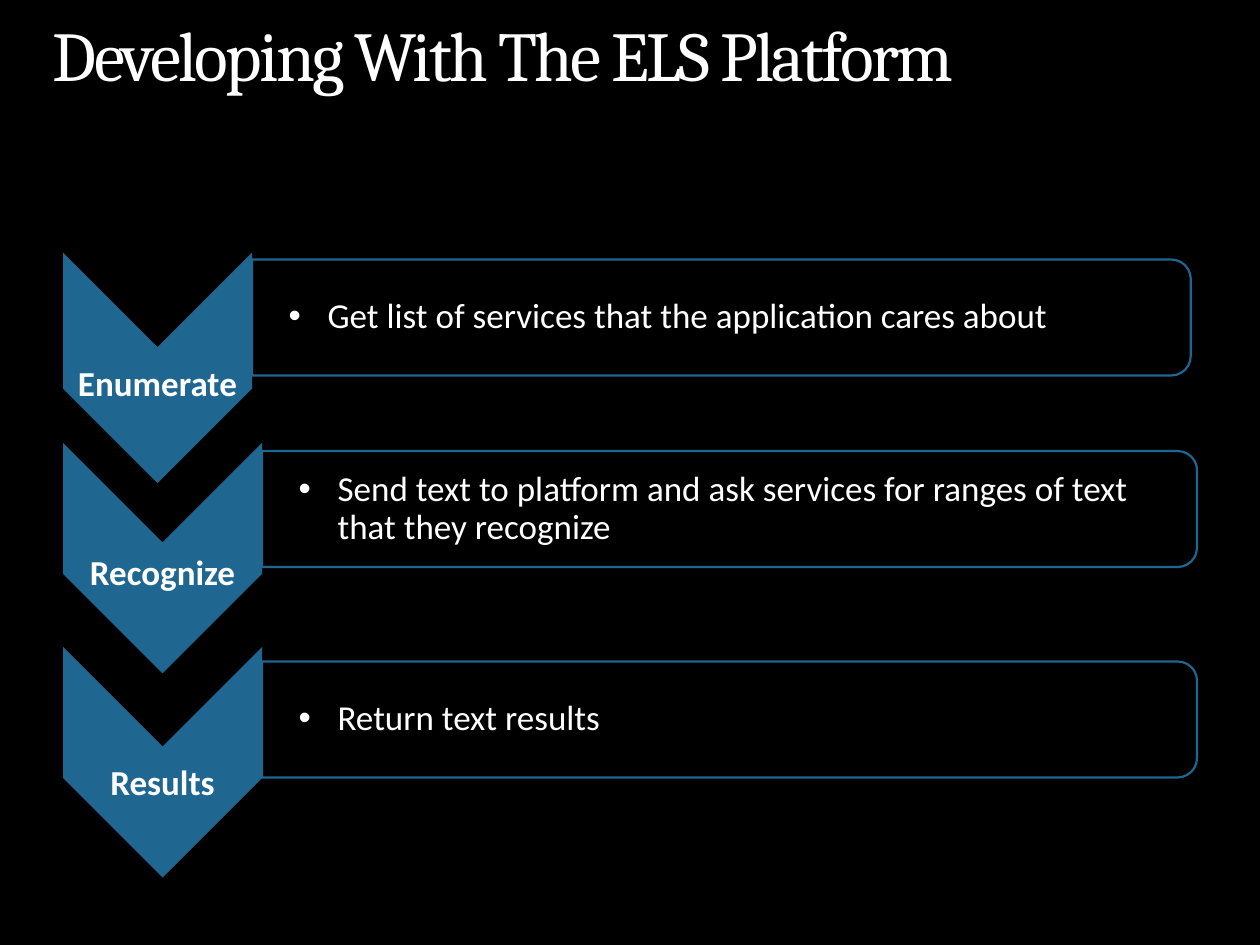
"""Build the slide on the three steps of developing with the ELS platform."""
from dataclasses import dataclass

from lxml.etree import SubElement
from pptx import Presentation
from pptx.dml.color import RGBColor
from pptx.enum.shapes import MSO_SHAPE as SHAPE
from pptx.enum.text import MSO_ANCHOR as ANCHOR, MSO_AUTO_SIZE as AUTOSIZE, PP_ALIGN as ALIGN
from pptx.oxml.ns import qn
from pptx.util import Inches, Pt

COLORS = {"background": "000000", "text": "FFFFFF", "accent": "1F6691"}
LEFT = 0.5
CHEVRON_HEIGHT = 1.83
PANEL_HEIGHT = 0.92
LABEL_HEIGHT = 0.55
TEXT_GAP = 0.03
BULLET_INDENT = 0.31


@dataclass
class Step:
    label: str
    detail: str
    chevron_width: float
    panel_width: float
    chevron_y: float
    label_y: float
    panel_y: float
    detail_height: float


STEPS = [
    Step("Enumerate", "Get list of services that the application cares about",
         1.5, 7.45, 2.92, 3.06, 2.52, 0.86),
    Step("Recognize",
         "Send text to platform and ask services for ranges of text that they recognize",
         1.58, 7.42, 4.43, 4.56, 4.04, 1.07),
    Step("Results", "Return text results",
         1.58, 7.42, 6.05, 6.22, 5.71, 0.72),
]


def color(name: str) -> RGBColor:
    return RGBColor.from_string(COLORS[name])


def set_insets(tf, left: float, other: float) -> None:
    tf.margin_left = Inches(left)
    tf.margin_top = tf.margin_right = tf.margin_bottom = Inches(other)


def format_run(r, face: str, size: int, bold: bool = False) -> None:
    r.font.name = face
    r.font.size = Pt(size)
    r.font.bold = bold
    r.font.color.rgb = color("text")


def add_turned_shape(slide, kind, left: float, center_y: float, width: float, height: float):
    """Add a shape turned by 90 degrees that fills the given visible area."""
    sp = slide.shapes.add_shape(
        kind, Inches(left + (width - height) / 2), Inches(center_y - width / 2),
        Inches(height), Inches(width))
    sp.rotation = 90
    sp.shadow.inherit = False
    return sp


def add_text(slide, text: str, left: float, center_y: float, width: float, height: float,
             inset_left: float, inset: float, space_after: int, bold: bool = False):
    """Add a vertically centred text box and return its paragraph."""
    box = slide.shapes.add_textbox(
        Inches(left), Inches(center_y - height / 2), Inches(width), Inches(height))
    tf = box.text_frame
    tf.word_wrap = True
    tf.vertical_anchor = ANCHOR.MIDDLE
    set_insets(tf, inset_left, inset)
    tf.text = text
    p = tf.paragraphs[0]
    p.line_spacing = 0.9
    p.space_after = Pt(space_after)
    format_run(p.runs[0], "Calibri", 20, bold)
    return p


def add_bullet(p) -> None:
    pPr = p._p.get_or_add_pPr()
    pPr.set("marL", str(Inches(BULLET_INDENT)))
    pPr.set("indent", str(-Inches(BULLET_INDENT)))
    SubElement(pPr, qn("a:buFont")).set("typeface", "Arial")
    SubElement(pPr, qn("a:buChar")).set("char", "•")


def add_panel(slide, step: Step) -> None:
    left = LEFT + step.chevron_width
    sp = add_turned_shape(slide, SHAPE.ROUND_2_SAME_RECTANGLE, left, step.panel_y,
                          step.panel_width, PANEL_HEIGHT)
    sp.fill.background()
    sp.line.color.rgb = color("accent")
    sp.line.width = Pt(1.25)
    p = add_text(slide, step.detail, left + TEXT_GAP, step.panel_y,
                 step.panel_width - 2 * TEXT_GAP, step.detail_height, 0.26, 0.02, 3)
    add_bullet(p)


def add_chevron(slide, step: Step) -> None:
    sp = add_turned_shape(slide, SHAPE.CHEVRON, LEFT, step.chevron_y,
                          step.chevron_width, CHEVRON_HEIGHT)
    sp.fill.solid()
    sp.fill.fore_color.rgb = color("accent")
    sp.line.fill.background()
    p = add_text(slide, step.label, LEFT, step.label_y, step.chevron_width,
                 LABEL_HEIGHT, 0.01, 0.01, 7, bold=True)
    p.alignment = ALIGN.CENTER


def add_title(slide, text: str) -> None:
    title = slide.shapes.title
    title.left, title.top = Inches(0.42), Inches(0.17)
    title.width, title.height = Inches(9.16), Inches(0.67)
    tf = title.text_frame
    tf.text = text
    tf.auto_size = AUTOSIZE.NONE
    tf.vertical_anchor = ANCHOR.TOP
    set_insets(tf, 0, 0)
    p = tf.paragraphs[0]
    p.alignment = ALIGN.LEFT
    p.line_spacing = 0.9
    r = p.runs[0]
    format_run(r, "Cambria", 40)
    r._r.get_or_add_rPr().set("spc", "-150")


def main() -> None:
    prs = Presentation()
    prs.slide_width, prs.slide_height = Inches(10), Inches(7.5)
    slide = prs.slides.add_slide(prs.slide_layouts[5])
    slide.background.fill.solid()
    slide.background.fill.fore_color.rgb = color("background")
    add_title(slide, "Developing With The ELS Platform")
    for step in STEPS:
        add_panel(slide, step)
    for step in STEPS:
        add_chevron(slide, step)
    prs.save("out.pptx")


if __name__ == "__main__":
    main()
